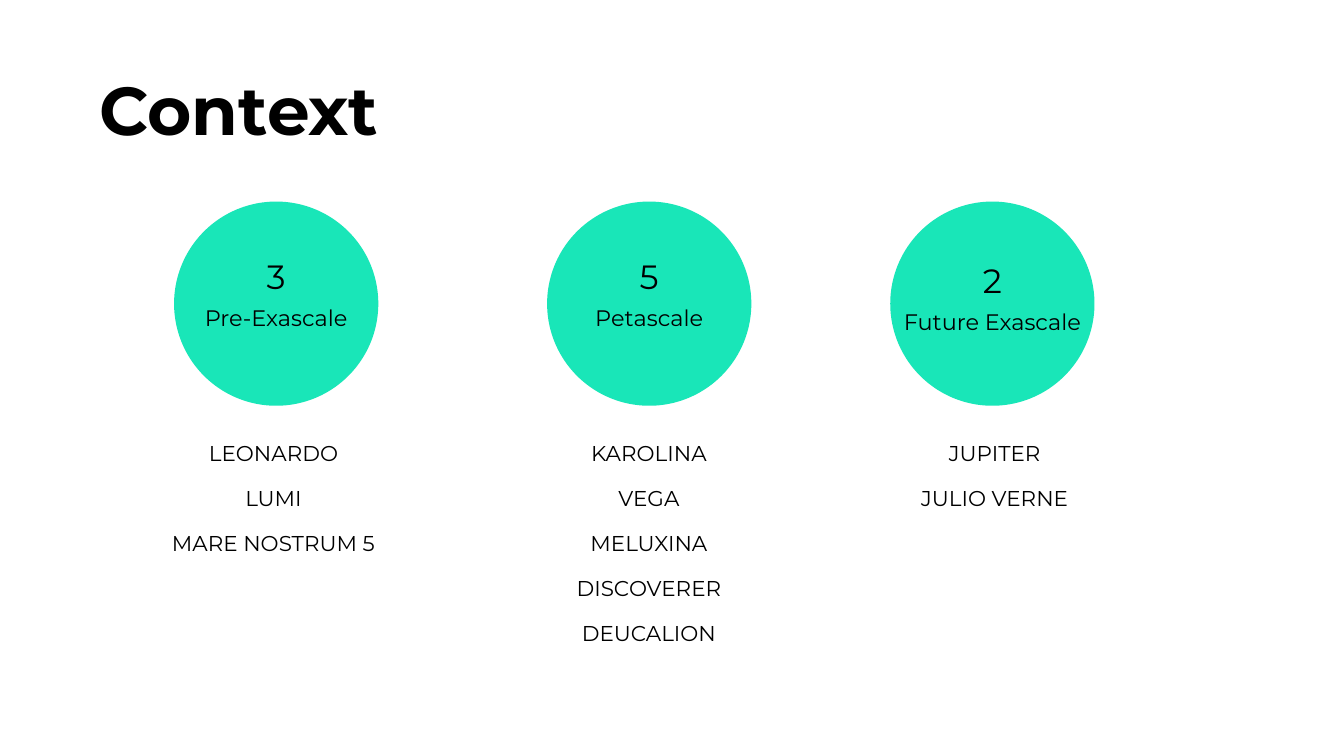
from dataclasses import dataclass

from pptx import Presentation
from pptx.dml.color import RGBColor
from pptx.enum.shapes import MSO_SHAPE
from pptx.enum.text import MSO_ANCHOR, PP_ALIGN
from pptx.slide import Slide
from pptx.text.text import TextFrame, _Paragraph
from pptx.util import Cm, Pt

COLOURS = {"text": "000000", "circle": "19E6B8", "background": "FFFFFF"}
FONT = "Montserrat"
CIRCLE_TOP, CIRCLE_SIZE = 7.62, 7.72
CAPTION_HEIGHT, CAPTION_LINE = 6.2, 18.9
NAMES_TOP, NAME_STEP, NAME_HEIGHT = 16.48, 1.7, 1.09


@dataclass
class System:
    name: str
    width: float


@dataclass
class Tier:
    count: str
    label: str
    centre: float
    names_centre: float
    caption_top: float
    caption_width: float
    systems: list[System]


TIERS = [
    Tier("3", "Pre-Exascale", 10.44, 10.34, 8.43, 6.27, [
        System("LEONARDO", 5.2),
        System("LUMI", 2.5),
        System("MARE NOSTRUM 5", 8.1),
    ]),
    Tier("5", "Petascale", 24.54, 24.53, 8.43, 6.27, [
        System("KAROLINA", 4.8),
        System("VEGA", 2.7),
        System("MELUXINA", 4.8),
        System("DISCOVERER", 5.8),
        System("DEUCALION", 5.4),
    ]),
    Tier("2", "Future Exascale", 37.51, 37.6, 8.58, 7.75, [
        System("JUPITER", 3.8),
        System("JULIO VERNE", 5.9),
    ]),
]


def add_span(para: _Paragraph, text: str, size: float, bold: bool = False) -> None:
    span = para.add_run()
    span.text = text
    span.font.name = FONT
    span.font.size = Pt(size)
    span.font.bold = bold
    span.font.color.rgb = RGBColor.from_string(COLOURS["text"])


def set_margins(frame: TextFrame, margin: float) -> None:
    frame.margin_left = frame.margin_right = Cm(margin)
    frame.margin_top = frame.margin_bottom = Cm(margin)


def centre_lines(para: _Paragraph, spacing: float) -> None:
    para.alignment = PP_ALIGN.CENTER
    para.line_spacing = Pt(spacing)


def draw_title(page: Slide, text: str) -> None:
    box = page.shapes.title
    box.left, box.top, box.width, box.height = Cm(3.5), Cm(1.52), Cm(43.82), Cm(5.54)
    box.text_frame.vertical_anchor = MSO_ANCHOR.MIDDLE
    para = box.text_frame.paragraphs[0]
    para.alignment = PP_ALIGN.LEFT
    para.line_spacing = 0.9
    add_span(para, text, 72.5, bold=True)


def draw_badge(page: Slide, tier: Tier) -> None:
    group = page.shapes.add_group_shape()
    circle = group.shapes.add_shape(
        MSO_SHAPE.OVAL, Cm(tier.centre - CIRCLE_SIZE / 2), Cm(CIRCLE_TOP),
        Cm(CIRCLE_SIZE), Cm(CIRCLE_SIZE))
    circle.shadow.inherit = False
    circle.fill.solid()
    circle.fill.fore_color.rgb = RGBColor.from_string(COLOURS["circle"])
    circle.line.fill.background()

    box = group.shapes.add_textbox(
        Cm(tier.centre - tier.caption_width / 2), Cm(tier.caption_top),
        Cm(tier.caption_width), Cm(CAPTION_HEIGHT))
    frame = box.text_frame
    frame.word_wrap = True
    frame.vertical_anchor = MSO_ANCHOR.MIDDLE
    set_margins(frame, 0.15)
    count = frame.paragraphs[0]
    centre_lines(count, CAPTION_LINE)
    add_span(count, tier.count, 36)
    label = frame.add_paragraph()
    centre_lines(label, CAPTION_LINE)
    label.space_before = Pt(CAPTION_LINE)
    add_span(label, tier.label, 24)


def draw_systems(page: Slide, tier: Tier) -> None:
    for row, system in enumerate(tier.systems):
        box = page.shapes.add_textbox(
            Cm(tier.names_centre - system.width / 2), Cm(NAMES_TOP + row * NAME_STEP),
            Cm(system.width), Cm(NAME_HEIGHT))
        box.text_frame.word_wrap = True
        set_margins(box.text_frame, 0)
        para = box.text_frame.paragraphs[0]
        centre_lines(para, 32.2)
        add_span(para, system.name, 23)


def main() -> None:
    deck = Presentation()
    deck.slide_width, deck.slide_height = Cm(50.8), Cm(28.58)
    page = deck.slides.add_slide(deck.slide_layouts[5])
    page.background.fill.solid()
    page.background.fill.fore_color.rgb = RGBColor.from_string(COLOURS["background"])
    draw_title(page, "Context")
    for tier in TIERS:
        draw_badge(page, tier)
        draw_systems(page, tier)
    deck.save("out.pptx")


if __name__ == "__main__":
    main()
